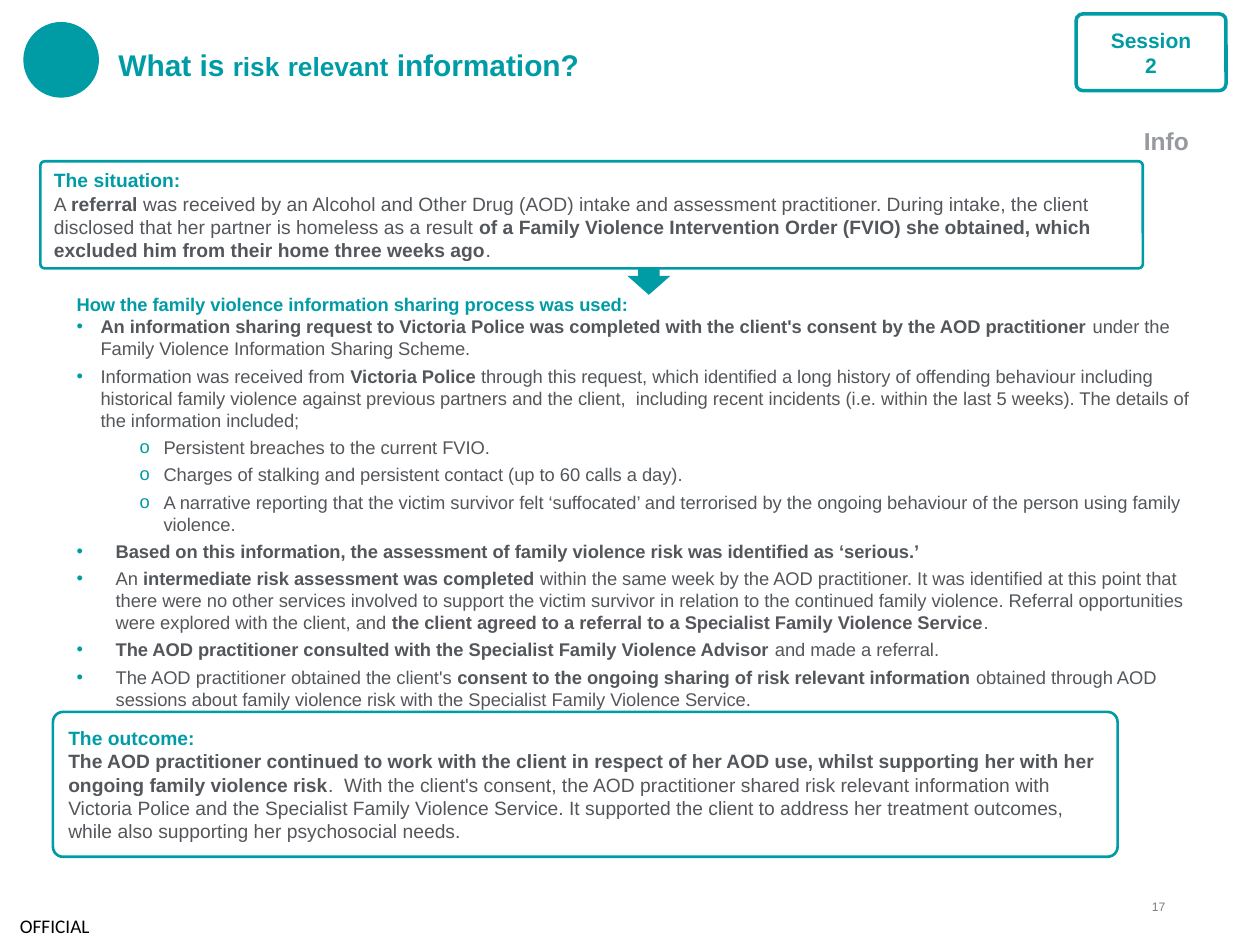
"""Build the case study slide on risk relevant information."""
from lxml.etree import SubElement
from pptx import Presentation
from pptx.dml.color import RGBColor
from pptx.enum.shapes import MSO_SHAPE
from pptx.enum.text import MSO_ANCHOR, PP_ALIGN
from pptx.oxml.ns import qn
from pptx.util import Inches, Pt

TEAL = RGBColor(0x00, 0x9C, 0xA6)
INK = RGBColor(0x53, 0x56, 0x5A)
GREY = RGBColor(0x96, 0x99, 0x9E)
DIM = RGBColor(0x7F, 0x7F, 0x7F)
BLACK = RGBColor(0, 0, 0)
WHITE = RGBColor(0xFF, 0xFF, 0xFF)

HEAD = "How the family violence information sharing process was used:"
NEAR = {"mark": "•", "left": 0.19, "hang": 0.19}
SUB = {"mark": "o", "left": 0.69, "hang": 0.19}
WIDE = {"mark": "•", "left": 0.31, "hang": 0.31}
STEPS = [
    (NEAR, "*An information sharing request to Victoria Police was completed with the "
     "client's consent by the AOD practitioner *under the Family Violence Information "
     "Sharing Scheme."),
    (NEAR, "Information was received from *Victoria Police *through this request, which "
     "identified a long history of offending behaviour including historical family violence "
     "against previous partners and the client,  including recent incidents (i.e. within "
     "the last 5 weeks). The details of the information included;"),
    (SUB, "Persistent breaches to the current FVIO."),
    (SUB, "Charges of stalking and persistent contact (up to 60 calls a day)."),
    (SUB, "A narrative reporting that the victim survivor felt ‘suffocated’ and "
     "terrorised by the ongoing behaviour of the person using family violence."),
    (WIDE, "*Based on this information, the assessment of family violence risk was "
     "identified as ‘serious.’"),
    (WIDE, "An *intermediate risk assessment was completed *within the same week by the "
     "AOD practitioner. It was identified at this point that there were no other services "
     "involved to support the victim survivor in relation to the continued family violence. "
     "Referral opportunities were explored with the client, and *the client agreed to a "
     "referral to a Specialist Family Violence Service*."),
    (WIDE, "*The AOD practitioner consulted with the Specialist Family Violence Advisor "
     "*and made a referral."),
    (WIDE, "The AOD practitioner obtained the client's *consent to the ongoing sharing of "
     "risk relevant information* obtained through AOD sessions about family violence risk "
     "with the Specialist Family Violence Service."),
]
CASE = ("A *referral* was received by an Alcohol and Other Drug (AOD) intake and assessment "
        "practitioner. During intake, the client disclosed that her partner is homeless as a "
        "result *of a Family Violence Intervention Order (FVIO) she obtained, which excluded "
        "him from their home three weeks ago*.")
RESULT = ("*The AOD practitioner continued to work with the client in respect of her AOD use, "
          "whilst supporting her with her ongoing family violence risk*.  With the client's "
          "consent, the AOD practitioner shared risk relevant information with Victoria Police "
          "and the Specialist Family Violence Service. It supported the client to address her "
          "treatment outcomes, while also supporting her psychosocial needs.")


def set_frame(shape, pad=(0.1, 0.05), anchor=MSO_ANCHOR.TOP):
    """Wrap the text of a shape and set its insets and anchor."""
    frame = shape.text_frame
    frame.word_wrap = True
    frame.margin_left = frame.margin_right = Inches(pad[0])
    frame.margin_top = frame.margin_bottom = Inches(pad[1])
    frame.vertical_anchor = anchor
    return frame


def add_box(slide, place, **frame):
    """Add a text box and return its frame."""
    return set_frame(slide.shapes.add_textbox(*map(Inches, place)), **frame)


def add_form(slide, kind, place, fill=None, line=None, round=None):
    """Add a flat preset shape."""
    shape = slide.shapes.add_shape(kind, *map(Inches, place))
    shape.shadow.inherit = False
    if fill is None:
        shape.fill.background()
    else:
        shape.fill.solid()
        shape.fill.fore_color.rgb = fill
    if line is None:
        shape.line.fill.background()
    else:
        shape.line.color.rgb = TEAL
        shape.line.width = Pt(line)
    if round is not None:
        shape.adjustments[0] = round
    return shape


def add_bullet(para, mark, left, hang):
    """Give a paragraph a teal bullet and a hanging indent."""
    props = para._p.get_or_add_pPr()
    props.set("marL", str(Inches(left)))
    props.set("indent", str(-Inches(hang)))
    color = SubElement(props, qn("a:buClr"))
    SubElement(color, qn("a:srgbClr"), val=str(TEAL))
    SubElement(props, qn("a:buFont"), typeface="Arial")
    SubElement(props, qn("a:buChar"), char=mark)


def add_text(frame, text, size=10.5, color=TEAL, bold=False, small=None, font="Arial",
             align=PP_ALIGN.LEFT, after=0, bullet=None):
    """Write a paragraph in which asterisks switch to bold, or to the small size."""
    para = frame.paragraphs[0]
    if para.runs:
        para = frame.add_paragraph()
    if bullet:
        para.level = 1 if bullet is SUB else 0
        add_bullet(para, **bullet)
    para.alignment = align
    para.space_after = Pt(after)
    for index, part in enumerate(text.split("*")):
        if part:
            run = para.add_run()
            run.text = part
            odd = index % 2 == 1
            run.font.name = font
            run.font.size = Pt(small if odd and small else size)
            run.font.bold = bold or odd
            run.font.color.rgb = color


def add_panel(slide, place, title, text, round, fill=None, anchor=MSO_ANCHOR.TOP):
    """Add a rounded panel with a heading and a paragraph."""
    shape = add_form(slide, MSO_SHAPE.ROUNDED_RECTANGLE, place, fill, 1.5, round)
    frame = set_frame(shape, anchor=anchor)
    add_text(frame, title, size=11, bold=True)
    add_text(frame, text, size=11, color=INK)


def add_steps(slide):
    """Add the list of steps in the sharing process."""
    frame = add_box(slide, (0.51, 2.28, 9.18, 3.95))
    add_text(frame, HEAD, bold=True)
    for bullet, text in STEPS:
        add_text(frame, text, color=INK, after=3, bullet=bullet)


def add_top(slide):
    """Add the title, the session badge and the section label."""
    add_form(slide, MSO_SHAPE.OVAL, (0.19, 0.18, 0.59, 0.59), TEAL, 0.75)
    title = add_box(slide, (0.94, 0.19, 7.01, 0.65), pad=(0, 0), anchor=MSO_ANCHOR.MIDDLE)
    add_text(title, "What is *risk* *relevant* information?", size=17.1, small=15,
             bold=True, after=3.4)
    badge = add_form(slide, MSO_SHAPE.ROUNDED_RECTANGLE, (8.54, 0.11, 1.19, 0.61),
                     WHITE, 2, 0.09)
    frame = set_frame(badge, pad=(0.2, 0.05), anchor=MSO_ANCHOR.MIDDLE)
    add_text(frame, "Session 2", size=12, bold=True, align=PP_ALIGN.CENTER, after=6)
    label = add_box(slide, (8.98, 0.95, 1.02, 0.34))
    add_text(label, "Info", size=14, color=GREY, bold=True)


def add_foot(slide):
    """Add the marking and the page number."""
    mark = add_box(slide, (0, 7.19, 0.87, 0.31), pad=(0, 0), anchor=MSO_ANCHOR.MIDDLE)
    add_text(mark, "OFFICIAL", size=11, color=BLACK, font="Calibri", align=PP_ALIGN.CENTER)
    page = add_box(slide, (8.91, 7.14, 0.34, 0.2), pad=(0, 0))
    add_text(page, "17", size=7, color=DIM, align=PP_ALIGN.RIGHT)


def main():
    """Build and save the slide."""
    deck = Presentation()
    deck.slide_width, deck.slide_height = Inches(10), Inches(7.5)
    slide = deck.slides.add_slide(deck.slide_layouts[6])
    add_form(slide, MSO_SHAPE.DOWN_ARROW, (4.98, 2.04, 0.34, 0.3), TEAL)
    add_steps(slide)
    add_top(slide)
    add_panel(slide, (0.32, 1.28, 8.75, 0.85), "The situation:", CASE, 0.04, WHITE)
    add_panel(slide, (0.42, 5.65, 8.45, 1.15), "The outcome:", RESULT, 0.07,
              anchor=MSO_ANCHOR.MIDDLE)
    add_foot(slide)
    deck.save("out.pptx")


if __name__ == "__main__":
    main()
